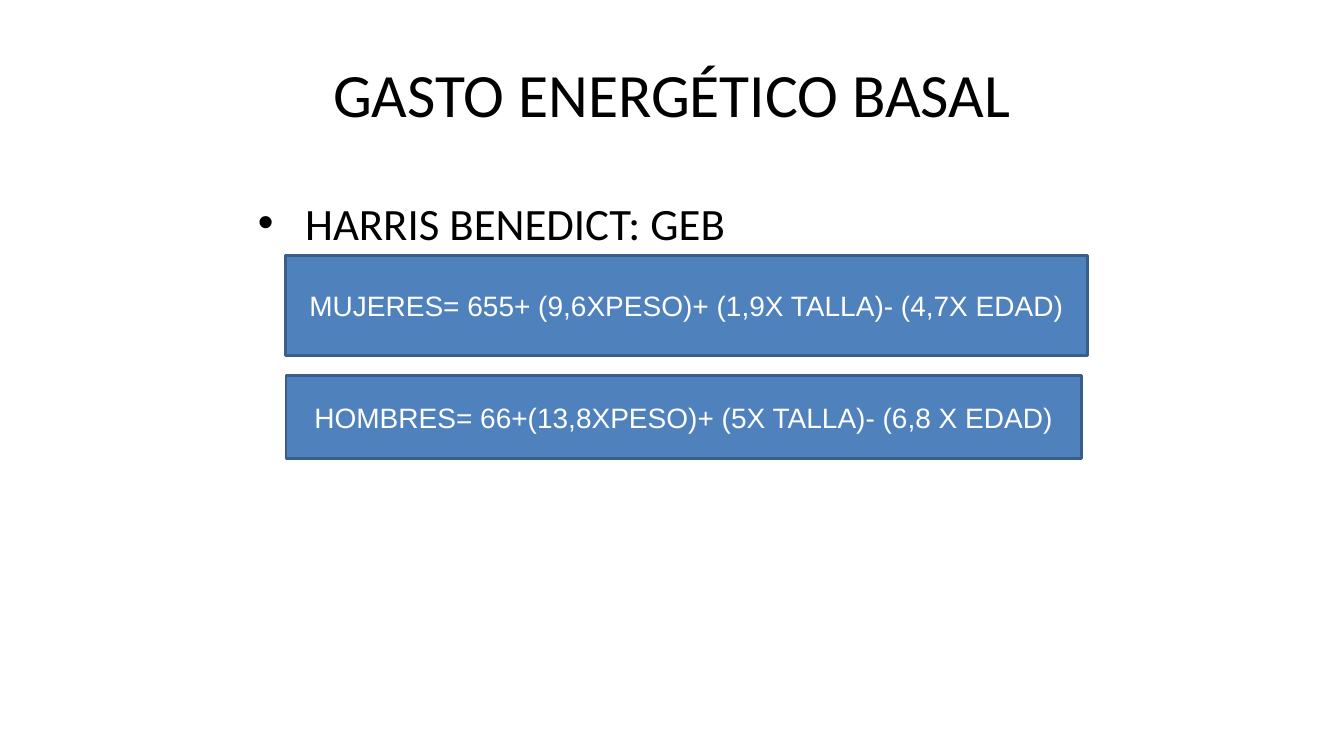
"""Build the slide on basal energy expenditure."""
from lxml import etree
from pptx import Presentation, util as u
from pptx.dml.color import RGBColor
from pptx.enum import shapes, text
from pptx.oxml.ns import qn


class Deck:
    """Hold the style and the current slide."""

    hues = {"ink": "000000", "paper": "FFFFFF", "fill": "4F81BD", "edge": "395E89"}

    def __init__(self):
        """Open a wide deck with one title-only slide."""
        self.prs = Presentation()
        self.prs.slide_width = u.Cm(33.87)
        self.prs.slide_height = u.Cm(19.05)
        self.slide = self.prs.slides.add_slide(self.prs.slide_layouts[5])

    def hue(self, name):
        """Return a named colour."""
        return RGBColor.from_string(self.hues[name])

    def label(self, shape, words, size, face, hue, align, anchor):
        """Set and format the text of a shape."""
        frame = shape.text_frame
        frame.text = words
        frame.word_wrap = True
        frame.auto_size = text.MSO_AUTO_SIZE.NONE
        frame.vertical_anchor = anchor
        par = frame.paragraphs[0]
        par.alignment = align
        font = par.runs[0].font
        font.size, font.name = u.Pt(size), face
        font.color.rgb = self.hue(hue)
        return par

    def title(self, words, *box):
        """Place and format the title."""
        head = self.slide.shapes.title
        head.left, head.top, head.width, head.height = map(u.Cm, box)
        self.label(head, words, 44, "Calibri", "ink",
                   text.PP_ALIGN.CENTER, text.MSO_ANCHOR.MIDDLE)

    def bullet(self, words, *box):
        """Add a text box with one bulleted line."""
        body = self.slide.shapes.add_textbox(*map(u.Cm, box))
        par = self.label(body, words, 32, "Calibri", "ink",
                         text.PP_ALIGN.LEFT, text.MSO_ANCHOR.TOP)
        props = par._p.get_or_add_pPr()
        props.set("marL", str(u.Cm(1.27)))
        props.set("indent", str(u.Cm(-1.19)))
        etree.SubElement(props, qn("a:buFont"), typeface="Arial")
        etree.SubElement(props, qn("a:buChar"), char="•")

    def panel(self, words, *box):
        """Add a filled rectangle with a formula."""
        rect = self.slide.shapes.add_shape(
            shapes.MSO_SHAPE.RECTANGLE, *map(u.Cm, box))
        rect.shadow.inherit = False
        rect.fill.solid()
        rect.fill.fore_color.rgb = self.hue("fill")
        rect.line.color.rgb = self.hue("edge")
        rect.line.width = u.Pt(2)
        self.label(rect, words, 20, "Arial", "paper",
                   text.PP_ALIGN.CENTER, text.MSO_ANCHOR.MIDDLE)


def main():
    """Compose and save the slide."""
    deck = Deck()
    deck.title("GASTO ENERGÉTICO BASAL", 5.51, 0.76, 22.86, 3.18)
    deck.bullet("HARRIS BENEDICT: GEB", 6.17, 4.8, 22.86, 12.57)
    deck.panel("MUJERES= 655+ (9,6XPESO)+ (1,9X TALLA)- (4,7X EDAD)",
               7.19, 6.43, 20.22, 2.54)
    deck.panel("HOMBRES= 66+(13,8XPESO)+ (5X TALLA)- (6,8 X EDAD)",
               7.21, 9.47, 20.04, 2.08)
    deck.prs.save("out.pptx")


if __name__ == "__main__":
    main()
